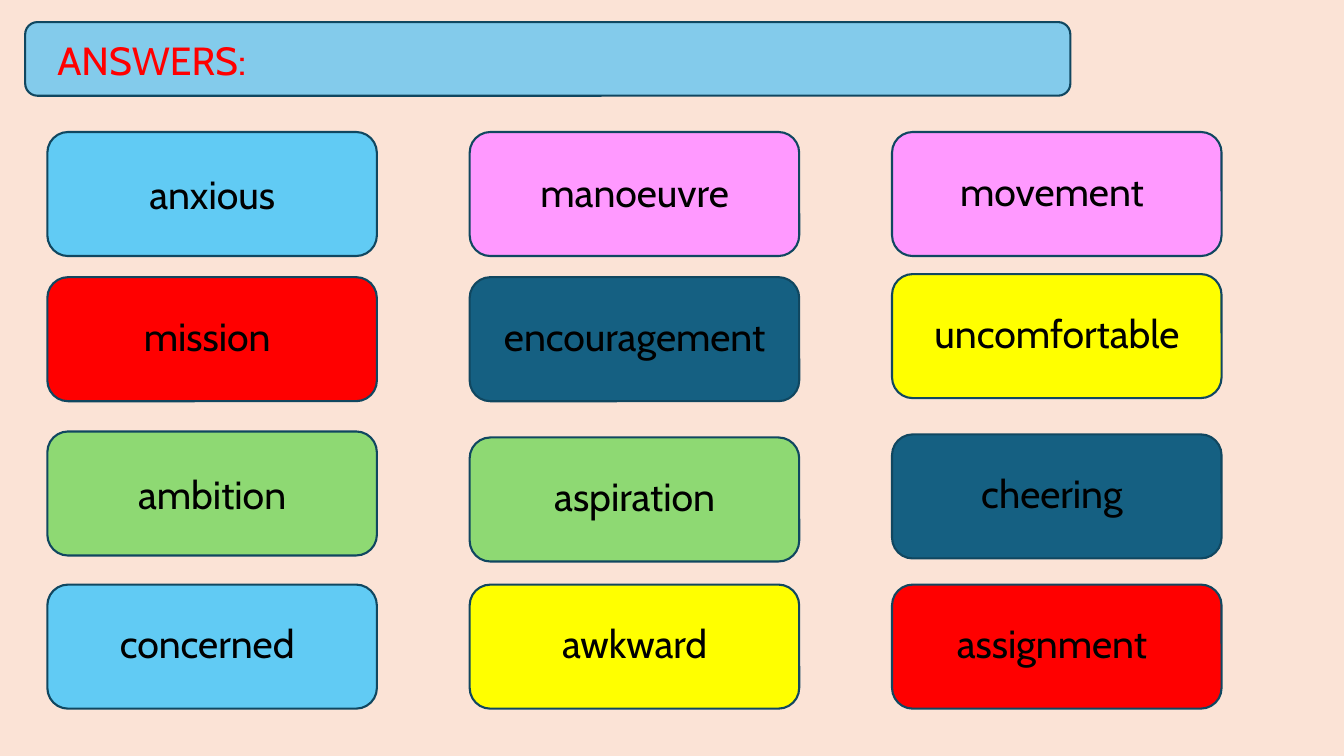
"""Build the slide of answer cards, matched in pairs by colour."""
from pptx import Presentation
from pptx.dml.color import RGBColor
from pptx.enum.shapes import MSO_SHAPE
from pptx.enum.text import MSO_ANCHOR, MSO_AUTO_SIZE, PP_ALIGN
from pptx.util import Pt

COLORS = {
    "page": "FBE3D6", "banner": "83CBEB", "edge": "104760", "title": "FF0000",
    "word": "000000", "sky": "61CBF4", "pink": "FF99FF", "red": "FF0000",
    "teal": "156082", "yellow": "FFFF00", "green": "8ED973",
}
LEFT, STEP = 33.84, 301.68
CARD_W, CARD_H = 235.4, 88.6
WORD_W, WORD_H = 209.5, 41.2

# Each card: word, fill, top of card, then offset of the word box (None: in the card)
CARDS = [
    [("anxious", "sky", 94.3, (13, 23.8)),
     ("manoeuvre", "pink", 94.3, (13, 22.3)),
     ("movement", "pink", 94.3, (9.4, 21.6))],
    [("mission", "red", 198, (9.4, 21.6)),
     ("encouragement", "teal", 198, (13, 21.6)),
     ("uncomfortable", "yellow", 195.8, (13, 21.6))],
    [("ambition", "green", 308.2, None),
     ("aspiration", "green", 312.5, (13, 21.6)),
     ("cheering", "teal", 310.3, (9.4, 21.2))],
    [("concerned", "sky", 417.6, (9.4, 21.2)),
     ("awkward", "yellow", 417.6, (13, 21.2)),
     ("assignment", "red", 417.6, (9.4, 21.2))],
]


def color(name):
    return RGBColor.from_string(COLORS[name])


def write(frame, text, ink, align):
    frame.word_wrap = True
    para = frame.paragraphs[0]
    para.text = text
    para.alignment = align
    para.font.name = "Cabin"
    para.font.size = Pt(28)
    para.font.color.rgb = color(ink)


def add_panel(slide, left, top, width, height, fill):
    panel = slide.shapes.add_shape(
        MSO_SHAPE.ROUNDED_RECTANGLE, Pt(left), Pt(top), Pt(width), Pt(height))
    panel.shadow.inherit = False
    panel.fill.solid()
    panel.fill.fore_color.rgb = color(fill)
    panel.line.color.rgb = color("edge")
    panel.line.width = Pt(1.5)
    return panel


def add_label(slide, left, top, width, text, ink, align):
    box = slide.shapes.add_textbox(Pt(left), Pt(top), Pt(width), Pt(WORD_H))
    write(box.text_frame, text, ink, align)
    box.text_frame.auto_size = MSO_AUTO_SIZE.SHAPE_TO_FIT_TEXT


def add_card(slide, left, top, word, fill, shift):
    panel = add_panel(slide, left, top, CARD_W, CARD_H, fill)
    if shift is None:
        panel.text_frame.vertical_anchor = MSO_ANCHOR.MIDDLE
        write(panel.text_frame, word, "word", PP_ALIGN.CENTER)
    else:
        add_label(slide, left + shift[0], top + shift[1], WORD_W,
                  word, "word", PP_ALIGN.CENTER)


def main():
    deck = Presentation()
    deck.slide_width, deck.slide_height = Pt(960), Pt(540)
    slide = deck.slides.add_slide(deck.slide_layouts[6])
    slide.background.fill.solid()
    slide.background.fill.fore_color.rgb = color("page")

    add_panel(slide, 18, 15.8, 746.6, 52.6, "banner")
    add_label(slide, LEFT, 22.3, 730.8, "ANSWERS:", "title", PP_ALIGN.LEFT)
    for row in CARDS:
        for col, (word, fill, top, shift) in enumerate(row):
            add_card(slide, LEFT + col * STEP, top, word, fill, shift)

    deck.save("out.pptx")


if __name__ == "__main__":
    main()
